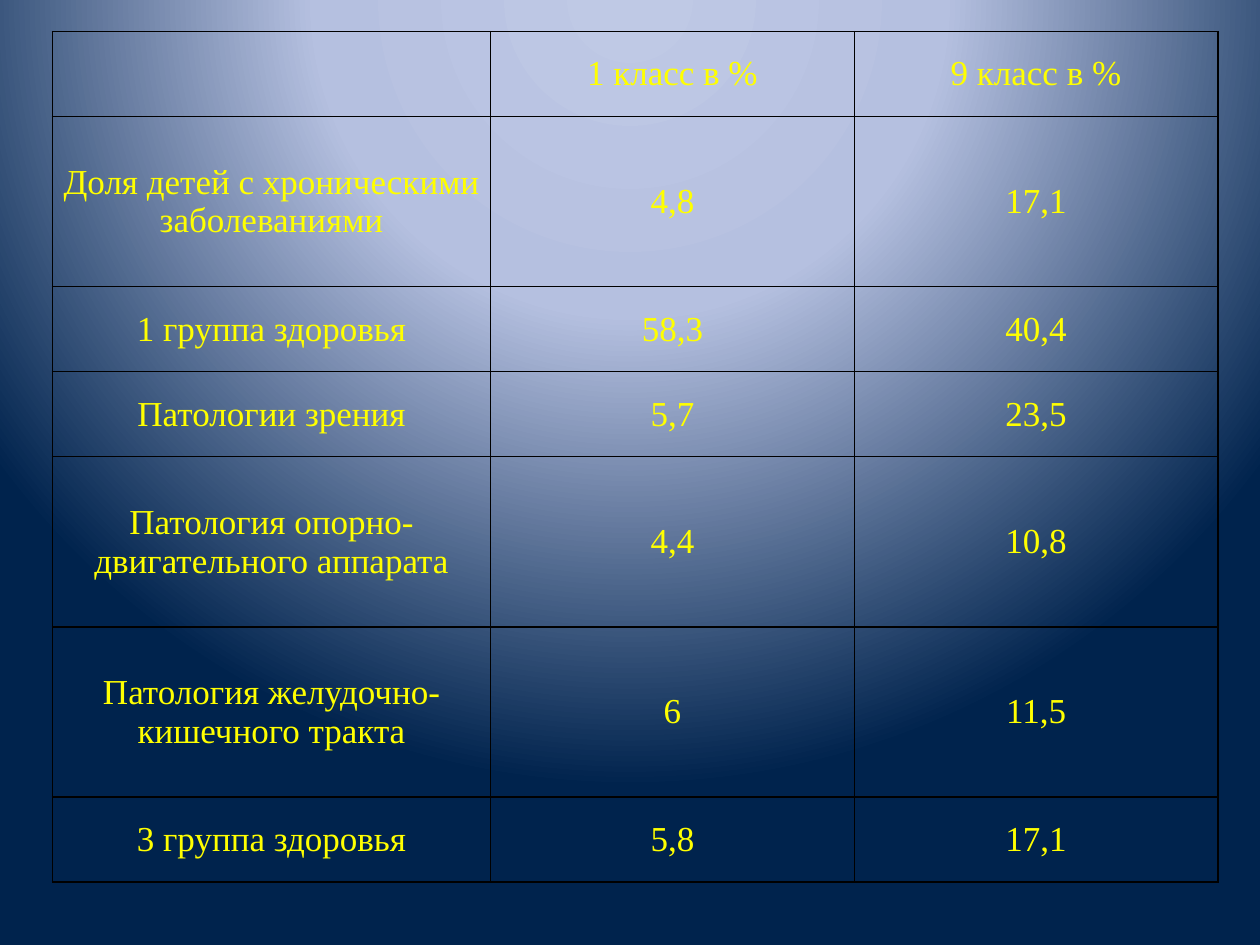
from dataclasses import dataclass

import lxml.etree
import pptx
import pptx.dml.color
import pptx.enum.text
import pptx.oxml
import pptx.oxml.ns
import pptx.slide
import pptx.table
import pptx.util

Pt = pptx.util.Pt
COLORS = {"glow": "BFC9E5", "haze": "B5C0E0", "navy": "00234D",
          "text": "FFFF00", "border": "000000"}
FONT = "Times New Roman"
LINE_HEIGHT = 48.6
COLUMN_WIDTHS = (250.4, 207.8, 207.8)


@dataclass
class HealthRow:
    label: str
    first_grade: str
    ninth_grade: str
    height_units: int = 1


HEALTH_ROWS = [
    HealthRow("", "1 класс в %", "9 класс в %"),
    HealthRow("Доля детей с хроническими заболеваниями", "4,8", "17,1", 2),
    HealthRow("1 группа здоровья", "58,3", "40,4"),
    HealthRow("Патологии зрения", "5,7", "23,5"),
    HealthRow("Патология опорно-двигательного аппарата", "4,4", "10,8", 2),
    HealthRow("Патология желудочно-кишечного тракта", "6", "11,5", 2),
    HealthRow("3 группа здоровья", "5,8", "17,1"),
]


def paint_background(slide: pptx.slide.Slide) -> None:
    """Radial glow centred above the top edge."""
    slide.background.fill.solid()
    solid = slide.element.find(".//" + pptx.oxml.ns.qn("p:bgPr"))[0]
    stops = "".join(
        f'<a:gs pos="{percent * 1000}"><a:srgbClr val="{COLORS[name]}"/></a:gs>'
        for percent, name in ((0, "glow"), (40, "haze"), (100, "navy")))
    gradient = pptx.oxml.parse_xml(
        f'<a:gradFill {pptx.oxml.ns.nsdecls("a")} rotWithShape="1">'
        f'<a:gsLst>{stops}</a:gsLst><a:path path="circle">'
        '<a:fillToRect l="50000" t="-80000" r="50000" b="180000"/>'
        '</a:path></a:gradFill>')
    solid.getparent().replace(solid, gradient)


def write_text(cell, text: str, *, size: float = 20, color: str = "text",
               align=pptx.enum.text.PP_ALIGN.CENTER) -> None:
    paragraph = cell.text_frame.paragraphs[0]
    paragraph.alignment = align
    if not text:
        return
    run = paragraph.add_run()
    run.text = text
    run.font.name = FONT
    run.font.size = Pt(size)
    run.font.bold = False
    run.font.color.rgb = pptx.dml.color.RGBColor.from_string(COLORS[color])


def style_cell(cell) -> None:
    """Transparent cell with a thin border on every side."""
    cell.fill.background()
    cell.vertical_anchor = pptx.enum.text.MSO_ANCHOR.MIDDLE
    cell.margin_left = cell.margin_right = Pt(5.4)
    cell.margin_top = cell.margin_bottom = Pt(0)
    properties = cell._tc.get_or_add_tcPr()
    for position, side in enumerate(("lnL", "lnR", "lnT", "lnB")):
        border = lxml.etree.Element(pptx.oxml.ns.qn(f"a:{side}"), w=str(Pt(1)))
        fill = lxml.etree.SubElement(border, pptx.oxml.ns.qn("a:solidFill"))
        lxml.etree.SubElement(fill, pptx.oxml.ns.qn("a:srgbClr"),
                              val=COLORS["border"])
        properties.insert(position, border)


def add_health_table(slide: pptx.slide.Slide) -> None:
    total_height = LINE_HEIGHT * sum(row.height_units for row in HEALTH_ROWS)
    health: pptx.table.Table = slide.shapes.add_table(
        len(HEALTH_ROWS), len(COLUMN_WIDTHS), Pt(30), Pt(18),
        Pt(sum(COLUMN_WIDTHS)), Pt(total_height)).table
    health.first_row = health.horz_banding = False
    for column, width in zip(health.columns, COLUMN_WIDTHS):
        column.width = Pt(width)
    for table_row, entry in zip(health.rows, HEALTH_ROWS):
        table_row.height = Pt(LINE_HEIGHT * entry.height_units)
        texts = (entry.label, entry.first_grade, entry.ninth_grade)
        for cell, text in zip(table_row.cells, texts):
            style_cell(cell)
            write_text(cell, text)


def main() -> None:
    presentation = pptx.Presentation()
    presentation.slide_width, presentation.slide_height = Pt(720), Pt(540)
    slide = presentation.slides.add_slide(presentation.slide_layouts[6])
    paint_background(slide)
    add_health_table(slide)
    presentation.save("out.pptx")


if __name__ == "__main__":
    main()
